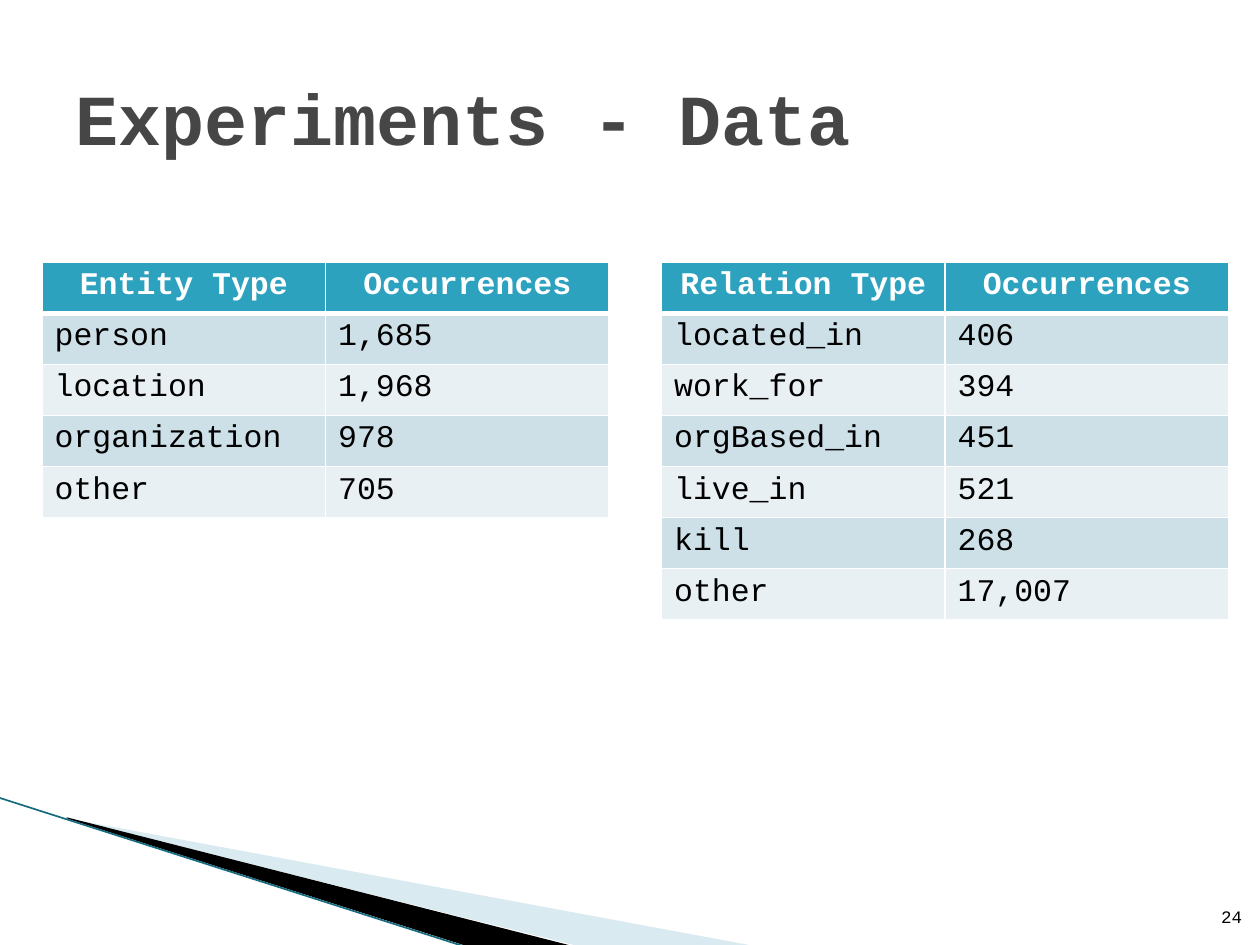
from lxml import etree
from pptx import Presentation
from pptx.dml.color import RGBColor
from pptx.enum import shapes, text
from pptx.oxml import ns
from pptx.util import Pt

HEADING = "Experiments - Data"
PAGE_NUMBER = "24"
ENTITIES = [
    ("Entity Type", "Occurrences"),
    ("person", "1,685"),
    ("location", "1,968"),
    ("organization", "978"),
    ("other", "705"),
]
RELATIONS = [
    ("Relation Type", "Occurrences"),
    ("located_in", "406"),
    ("work_for", "394"),
    ("orgBased_in", "451"),
    ("live_in", "521"),
    ("kill", "268"),
    ("other", "17,007"),
]

FONT = "Courier New"
WHITE = RGBColor(0xFF, 0xFF, 0xFF)
BLACK = RGBColor(0x00, 0x00, 0x00)
GREY = RGBColor(0x46, 0x46, 0x46)
TEAL = RGBColor(0x2D, 0xA2, 0xBF)
DARK_TEAL = RGBColor(0x16, 0x6B, 0x7F)
PALE_BLUE = RGBColor(0xA0, 0xCB, 0xDC)
BANDS = [RGBColor(0xE8, 0xF0, 0xF4), RGBColor(0xCD, 0xE0, 0xE8)]

PALE_WEDGE = [(39.6, 468.5), (428.4, 540.5), (328.3, 540.5), (39.6, 468)]
BLACK_WEDGE = [(38.2, 467.3), (329, 540.7), (267.8, 541.4), (38.9, 468)]
EDGE = [(-0.7, 455.8), (267.1, 541.4)]

TABLE_TOP = 149.8
COLUMN_WIDTH = 162
ROW_HEIGHT = 29.2


def style(paragraph, size, color, bold=False, align=text.PP_ALIGN.LEFT):
    paragraph.alignment = align
    font = paragraph.font
    font.name, font.size, font.bold = FONT, Pt(size), bold
    font.color.rgb = color


def add_wedge(slide, points, color, opacity=100):
    builder = slide.shapes.build_freeform(*points[0], scale=Pt(1))
    builder.add_line_segments(points[1:], close=True)
    wedge = builder.convert_to_shape()
    wedge.shadow.inherit = False
    wedge.line.fill.background()
    wedge.fill.solid()
    wedge.fill.fore_color.rgb = color
    if opacity < 100:
        tint = wedge.fill._xPr.find(".//" + ns.qn("a:srgbClr"))
        etree.SubElement(tint, ns.qn("a:alpha"), val=str(opacity * 1000))


def add_borders(cell, bottom_width):
    properties = cell._tc.get_or_add_tcPr()
    for side, width in (("L", 1), ("R", 1), ("T", 1), ("B", bottom_width)):
        border = etree.SubElement(properties, ns.qn("a:ln" + side), w=str(Pt(width)))
        fill = etree.SubElement(border, ns.qn("a:solidFill"))
        etree.SubElement(fill, ns.qn("a:srgbClr"), val=str(WHITE))


def add_counts(slide, left, rows):
    columns = len(rows[0])
    table = slide.shapes.add_table(
        len(rows), columns, Pt(left), Pt(TABLE_TOP),
        Pt(COLUMN_WIDTH * columns), Pt(ROW_HEIGHT * len(rows))).table
    for r, values in enumerate(rows):
        header = r == 0
        table.rows[r].height = Pt(ROW_HEIGHT)
        for c, value in enumerate(values):
            cell = table.cell(r, c)
            cell.text = value
            add_borders(cell, 3 if header else 1)
            cell.fill.solid()
            cell.fill.fore_color.rgb = TEAL if header else BANDS[r % 2]
            style(cell.text_frame.paragraphs[0], 18, WHITE if header else BLACK, header,
                  text.PP_ALIGN.CENTER if header else text.PP_ALIGN.LEFT)


def main():
    deck = Presentation()
    deck.slide_width, deck.slide_height = Pt(720), Pt(540)
    slide = deck.slides.add_slide(deck.slide_layouts[5])

    add_wedge(slide, PALE_WEDGE, PALE_BLUE, 40)
    add_wedge(slide, BLACK_WEDGE, BLACK)
    edge = slide.shapes.add_connector(
        shapes.MSO_CONNECTOR.STRAIGHT, *(Pt(v) for point in EDGE for v in point))
    edge.line.color.rgb = DARK_TEAL
    edge.line.width = Pt(0.95)
    etree.SubElement(edge._element.spPr, ns.qn("a:effectLst"))

    title = slide.shapes.title
    title.left, title.top, title.width, title.height = Pt(36), Pt(21.6), Pt(648), Pt(90)
    title.text_frame.text = HEADING
    title.text_frame.vertical_anchor = text.MSO_ANCHOR.MIDDLE
    title.text_frame.auto_size = text.MSO_AUTO_SIZE.NONE
    style(title.text_frame.paragraphs[0], 41, GREY, True)

    add_counts(slide, 24, ENTITIES)
    add_counts(slide, 378, RELATIONS)

    number = slide.shapes.add_textbox(Pt(681), Pt(504.7), Pt(28.8), Pt(28.8)).text_frame
    number.word_wrap = True
    number.margin_left = number.margin_right = 0
    number.vertical_anchor = text.MSO_ANCHOR.BOTTOM
    number.text = PAGE_NUMBER
    style(number.paragraphs[0], 10, BLACK, align=text.PP_ALIGN.RIGHT)
    number.margin_right = Pt(7.2)
    number.margin_right = 0

    deck.save("out.pptx")


if __name__ == "__main__":
    main()
